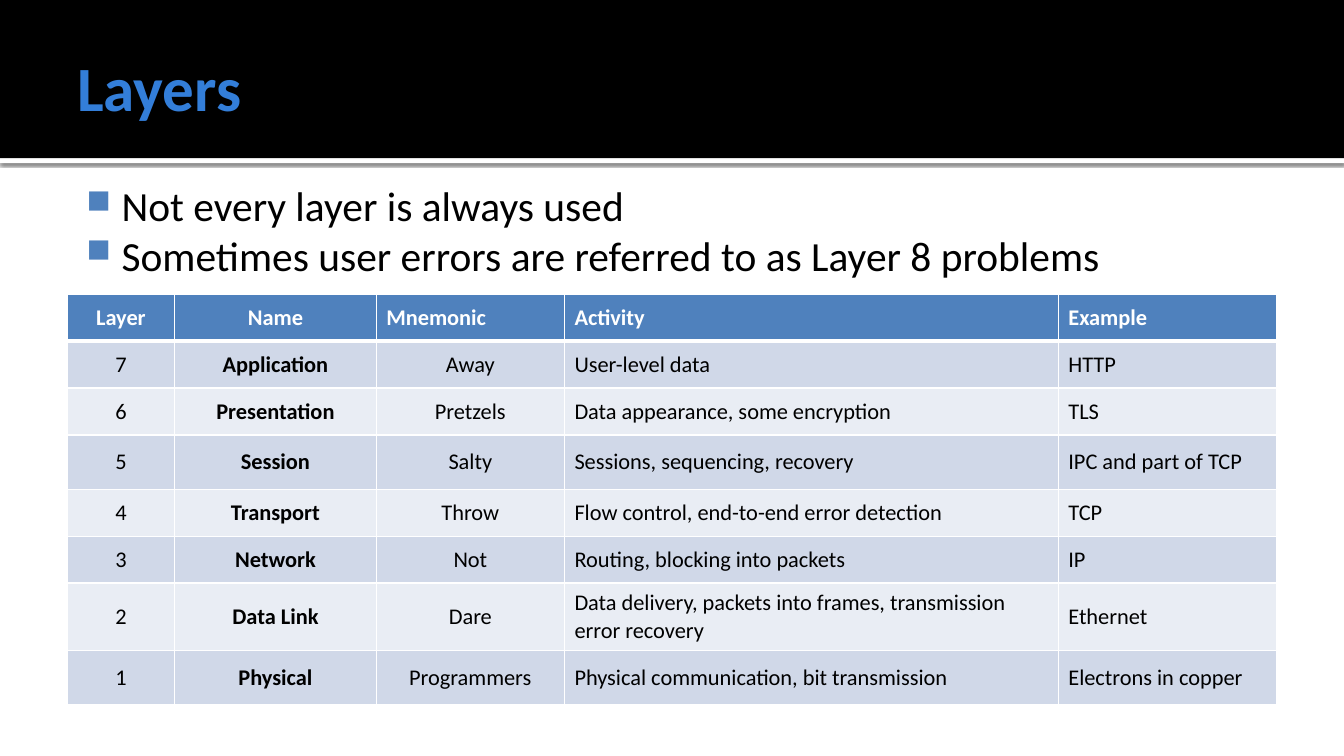
from dataclasses import dataclass

from lxml import etree
from pptx import Presentation
from pptx.dml.color import RGBColor
from pptx.enum.shapes import MSO_SHAPE
from pptx.enum.text import MSO_ANCHOR, PP_ALIGN
from pptx.oxml.ns import qn
from pptx.util import Emu, Inches, Pt

RECTANGLE = MSO_SHAPE.RECTANGLE
TOP, MIDDLE = MSO_ANCHOR.TOP, MSO_ANCHOR.MIDDLE
LEFT, CENTER = PP_ALIGN.LEFT, PP_ALIGN.CENTER

COLORS = {
    "white": "FFFFFF",
    "black": "000000",
    "title": "337ED9",
    "accent": "4F81BD",
    "odd_row": "D0D8E8",
    "even_row": "E9EDF4",
}
FONT = "Calibri"
SLIDE_WIDTH, SLIDE_HEIGHT = Inches(13.33), Inches(7.5)


@dataclass(frozen=True)
class Area:
    """A rectangle in percent of the slide's width and height."""

    left: float
    top: float
    width: float
    height: float

    def emu(self) -> tuple[Emu, Emu, Emu, Emu]:
        """Return left, top, width and height as lengths."""
        return across(self.left), down(self.top), across(self.width), down(self.height)


@dataclass(frozen=True)
class Column:
    """A table column: heading, width in percent, alignments and weight."""

    heading: str
    width: float
    heading_align: PP_ALIGN = LEFT
    body_align: PP_ALIGN = LEFT
    bold: bool = False


@dataclass(frozen=True)
class Layer:
    """A network layer with its row height in percent."""

    name: str
    mnemonic: str
    activity: str
    example: str
    height: float = 6.2


SEPARATOR = Area(0, 20.93, 100, 0.67)
BANNER = Area(0, 0, 100, 20.93)
TITLE = Area(5, 2.27, 90, 18.27)
REMARKS = Area(5, 22.53, 90, 15.2)
LAYER_TABLE = Area(5, 38.93, 90, 54.3)
HEADING_HEIGHT = 6.2

REMARK_TEXTS = (
    "Not every layer is always used",
    "Sometimes user errors are referred to as Layer 8 problems",
)
COLUMNS = (
    Column("Layer", 8, CENTER, CENTER),
    Column("Name", 15, CENTER, CENTER, True),
    Column("Mnemonic", 14, LEFT, CENTER),
    Column("Activity", 36.75),
    Column("Example", 16.25),
)
LAYERS = (
    Layer("Application", "Away", "User-level data", "HTTP"),
    Layer("Presentation", "Pretzels", "Data appearance, some encryption", "TLS"),
    Layer("Session", "Salty", "Sessions, sequencing, recovery", "IPC and part of TCP", 7.2),
    Layer("Transport", "Throw", "Flow control, end-to-end error detection", "TCP"),
    Layer("Network", "Not", "Routing, blocking into packets", "IP"),
    Layer("Data Link", "Dare",
          "Data delivery, packets into frames, transmission error recovery", "Ethernet", 8.9),
    Layer("Physical", "Programmers", "Physical communication, bit transmission",
          "Electrons in copper", 7.2),
)


def across(percent: float) -> Emu:
    """Turn a share of the slide's width into a length."""
    return Emu(round(SLIDE_WIDTH * percent / 100))


def down(percent: float) -> Emu:
    """Turn a share of the slide's height into a length."""
    return Emu(round(SLIDE_HEIGHT * percent / 100))


def rgb(color: str) -> RGBColor:
    """Look up a named colour."""
    return RGBColor.from_string(COLORS[color])


def add_xml(parent, tag: str, **attributes):
    """Append a DrawingML element with the given attributes."""
    return etree.SubElement(parent, qn(tag), {k: str(v) for k, v in attributes.items()})


def style(paragraph, size: float, color: str, bold: bool = False) -> None:
    """Format every run of a paragraph."""
    for run in paragraph.runs:
        run.font.name, run.font.size, run.font.bold = FONT, Pt(size), bold
        run.font.color.rgb = rgb(color)


def add_band(slide, area: Area, color: str):
    """Draw a plain filled band."""
    band = slide.shapes.add_shape(RECTANGLE, *area.emu())
    band.shadow.inherit = False
    band.fill.solid()
    band.fill.fore_color.rgb = rgb(color)
    band.line.fill.background()
    return band


def add_soft_shadow(shape) -> None:
    """Give a shape a narrow shadow below it."""
    effects = shape._element.spPr.find(qn("a:effectLst"))
    shadow = add_xml(effects, "a:outerShdw", blurRad=Pt(2.5), dist=Pt(0.8),
                     dir=5400000, algn="tl", rotWithShape=0)
    shade = add_xml(shadow, "a:srgbClr", val=COLORS["black"])
    add_xml(shade, "a:alpha", val=60000)


def add_text(slide, area: Area, anchor: MSO_ANCHOR, text: str, insets: tuple[float, ...]):
    """Add a wrapping text box with insets in left, top, right, bottom order."""
    frame = slide.shapes.add_textbox(*area.emu()).text_frame
    frame.word_wrap, frame.vertical_anchor = True, anchor
    (frame.margin_left, frame.margin_top,
     frame.margin_right, frame.margin_bottom) = map(Inches, insets)
    frame.text = text
    return frame


def add_bullet(paragraph) -> None:
    """Give a paragraph a hanging square bullet."""
    properties = paragraph._p.get_or_add_pPr()
    properties.set("marL", str(Inches(0.48)))
    properties.set("indent", str(Inches(-0.35)))
    add_xml(add_xml(properties, "a:buClr"), "a:srgbClr", val=COLORS["accent"])
    add_xml(properties, "a:buSzPct", val=80000)
    add_xml(properties, "a:buChar", char="■")


def fill_cell(cell, text: str, align: PP_ALIGN, fill: str, color: str,
              bold: bool, bottom: float) -> None:
    """Write one table cell with white borders."""
    cell.text_frame.text = text
    cell.vertical_anchor = MIDDLE
    paragraph = cell.text_frame.paragraphs[0]
    paragraph.alignment = align
    style(paragraph, 16, color, bold)
    properties = cell._tc.get_or_add_tcPr()
    for side, width in (("L", 1), ("R", 1), ("T", 1), ("B", bottom)):
        border = add_xml(properties, f"a:ln{side}", w=Pt(width))
        add_xml(add_xml(border, "a:solidFill"), "a:srgbClr", val=COLORS["white"])
    cell.fill.solid()
    cell.fill.fore_color.rgb = rgb(fill)


def add_layer_table(slide) -> None:
    """Add the table of layers, counted down to 1."""
    table = slide.shapes.add_table(len(LAYERS) + 1, len(COLUMNS), *LAYER_TABLE.emu()).table
    table.rows[0].height = down(HEADING_HEIGHT)
    for index, column in enumerate(COLUMNS):
        table.columns[index].width = across(column.width)
        fill_cell(table.cell(0, index), column.heading, column.heading_align,
                  "accent", "white", True, 3)
    for row, layer in enumerate(LAYERS, start=1):
        table.rows[row].height = down(layer.height)
        number = str(len(LAYERS) + 1 - row)
        values = (number, layer.name, layer.mnemonic, layer.activity, layer.example)
        fill = "odd_row" if row % 2 else "even_row"
        for index, (column, value) in enumerate(zip(COLUMNS, values)):
            fill_cell(table.cell(row, index), value, column.body_align,
                      fill, "black", column.bold, 1)


def main() -> None:
    """Build the slide and save it."""
    deck = Presentation()
    deck.slide_width, deck.slide_height = SLIDE_WIDTH, SLIDE_HEIGHT
    slide = deck.slides.add_slide(deck.slide_layouts[6])
    add_soft_shadow(add_band(slide, SEPARATOR, "white"))
    add_band(slide, BANNER, "black")
    title = add_text(slide, TITLE, MIDDLE, "Layers", (0.1, 0.05, 0.05, 0.05))
    style(title.paragraphs[0], 45, "title", True)
    remarks = add_text(slide, REMARKS, TOP, "\n".join(REMARK_TEXTS), (0.06, 0.1, 0.1, 0.05))
    for remark in remarks.paragraphs:
        add_bullet(remark)
        style(remark, 29.6, "black")
    add_layer_table(slide)
    deck.save("out.pptx")


if __name__ == "__main__":
    main()
